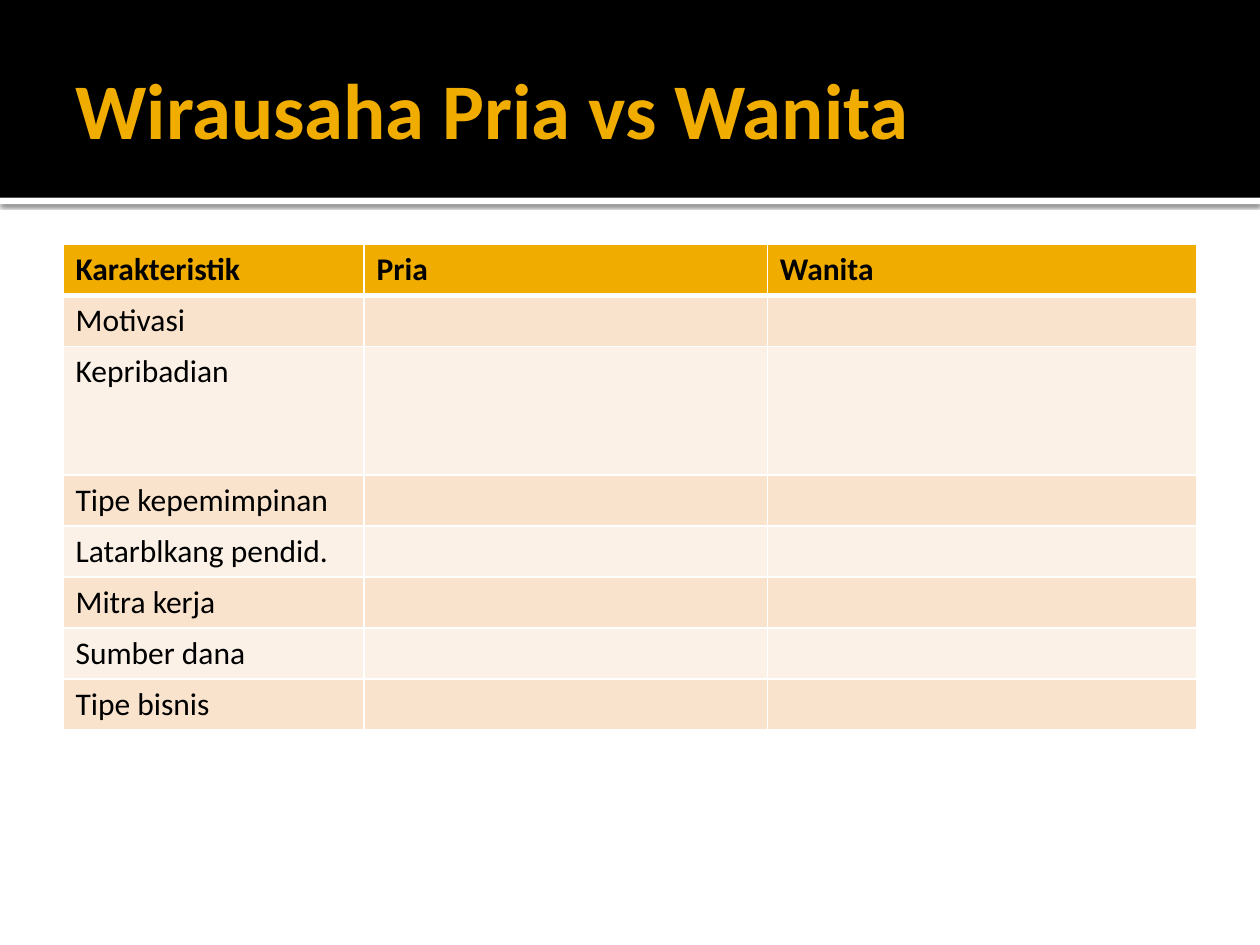
from lxml import etree
from pptx import Presentation
from pptx.dml.color import RGBColor
from pptx.enum.shapes import MSO_SHAPE
from pptx.enum.text import MSO_ANCHOR
from pptx.oxml import parse_xml
from pptx.oxml.ns import nsdecls, qn
from pptx.util import Inches, Pt

RECTANGLE = MSO_SHAPE.RECTANGLE
MIDDLE = MSO_ANCHOR.MIDDLE

BLACK = RGBColor(0x00, 0x00, 0x00)
WHITE = RGBColor(0xFF, 0xFF, 0xFF)
AMBER = RGBColor(0xF0, 0xAD, 0x00)
PEACH = RGBColor(0xF9, 0xE3, 0xCC)
CREAM = RGBColor(0xFC, 0xF1, 0xE7)

FONT = "Calibri"
HEADERS = ["Karakteristik", "Pria", "Wanita"]
CHARACTERISTICS = [
    "Motivasi", "Kepribadian", "Tipe kepemimpinan", "Latarblkang pendid.",
    "Mitra kerja", "Sumber dana", "Tipe bisnis",
]
COLUMN_WIDTHS = [2.39, 3.2, 3.41]
ROW_HEIGHT = 0.405
TALL_ROW, TALL_HEIGHT = 2, 1.02
THIN, THICK = 1, 3


def write_text(text_frame, text, size=18, color=BLACK, bold=False):
    run = text_frame.paragraphs[0].add_run()
    run.text = text
    run.font.name = FONT
    run.font.size = Pt(size)
    run.font.bold = bold
    run.font.color.rgb = color


def add_band(slide, left, top, width, height, color):
    band = slide.shapes.add_shape(
        RECTANGLE, Inches(left), Inches(top), Inches(width), Inches(height))
    band.shadow.inherit = False
    band.fill.solid()
    band.fill.fore_color.rgb = color
    band.line.fill.background()
    return band


def add_drop_shadow(shape):
    effects = shape._element.spPr.find(qn("a:effectLst"))
    effects.append(parse_xml(
        f'<a:outerShdw {nsdecls("a")} blurRad="{Pt(2.5)}" dist="{Pt(0.8)}" '
        'dir="5400000" algn="tl" rotWithShape="0"><a:srgbClr val="000000">'
        '<a:alpha val="60000"/></a:srgbClr></a:outerShdw>'))


def add_header(slide, left, top, width, height):
    """Black title band with a shadowed white strip along its lower edge."""
    strip = add_band(slide, left, top + height, width, 0.05, WHITE)
    add_drop_shadow(strip)
    add_band(slide, left, top, width, height, BLACK)
    title = slide.shapes.add_textbox(
        Inches(left + 0.5), Inches(top + 0.17), Inches(width - 1), Inches(1.37))
    text_frame = title.text_frame
    text_frame.word_wrap = True
    text_frame.vertical_anchor = MIDDLE
    text_frame.margin_left = Inches(0.1)
    text_frame.margin_right = Inches(0.05)
    write_text(text_frame, "Wirausaha Pria vs Wanita", size=45, color=AMBER, bold=True)


def set_borders(cell, top, bottom):
    """Draw white borders; top and bottom are line widths in points."""
    properties = cell._tc.get_or_add_tcPr()
    sides = {"lnL": THIN, "lnR": THIN, "lnT": top, "lnB": bottom}
    for index, (side, width) in enumerate(sides.items()):
        line = etree.Element(qn(f"a:{side}"), w=str(Pt(width)))
        fill = etree.SubElement(line, qn("a:solidFill"))
        etree.SubElement(fill, qn("a:srgbClr"), val=str(WHITE))
        properties.insert(index, line)


def add_comparison_table(slide, left, top, width):
    rows = [HEADERS] + [[name, "", ""] for name in CHARACTERISTICS]
    heights = [TALL_HEIGHT if index == TALL_ROW else ROW_HEIGHT
               for index in range(len(rows))]
    table = slide.shapes.add_table(
        len(rows), len(HEADERS), Inches(left), Inches(top),
        Inches(width), Inches(sum(heights))).table
    for column, column_width in zip(table.columns, COLUMN_WIDTHS):
        column.width = Inches(column_width)
    for index, (texts, height) in enumerate(zip(rows, heights)):
        is_header = index == 0
        table.rows[index].height = Inches(height)
        color = AMBER if is_header else (PEACH if index % 2 else CREAM)
        for cell, text in zip(table.rows[index].cells, texts):
            cell.fill.solid()
            cell.fill.fore_color.rgb = color
            set_borders(cell, top=THICK if index == 1 else THIN,
                        bottom=THICK if is_header else THIN)
            if text:
                write_text(cell.text_frame, text, bold=is_header)


def main():
    presentation = Presentation()
    presentation.slide_width = Inches(10)
    presentation.slide_height = Inches(7.5)
    slide = presentation.slides.add_slide(presentation.slide_layouts[6])
    add_header(slide, 0, 0, 10, 1.57)
    add_comparison_table(slide, 0.5, 1.94, 9)
    presentation.save("out.pptx")


if __name__ == "__main__":
    main()
